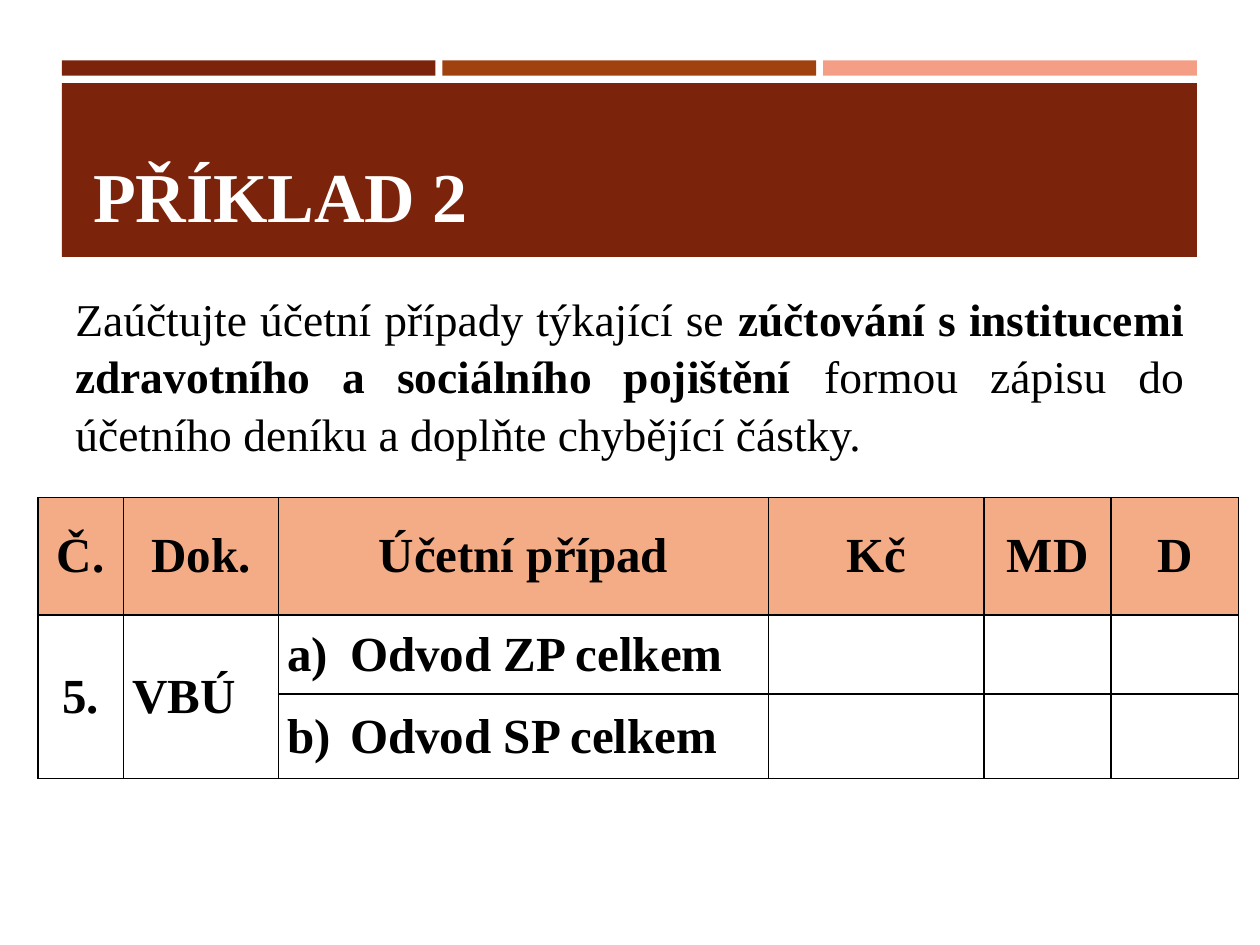
from lxml import etree
from pptx import Presentation
from pptx.dml.color import RGBColor
from pptx.enum.shapes import MSO_SHAPE
from pptx.enum.text import MSO_ANCHOR, PP_ALIGN
from pptx.oxml.ns import qn
from pptx.util import Inches, Pt

RECT = MSO_SHAPE.RECTANGLE
TOP, MIDDLE, BOTTOM = MSO_ANCHOR.TOP, MSO_ANCHOR.MIDDLE, MSO_ANCHOR.BOTTOM
LEFT, CENTER, JUSTIFY = PP_ALIGN.LEFT, PP_ALIGN.CENTER, PP_ALIGN.JUSTIFY

BLACK, WHITE = "000000", "FFFFFF"
MAROON, RUST, SALMON, PEACH = "7B230B", "9F4210", "F49E86", "F3AC85"


def rgb(color):
    return RGBColor.from_string(color)


class Deck:
    """Style and current slide; lengths are cells of a 100 x 75 grid."""

    font = "Times New Roman"
    cols, rows = 100, 75

    def __init__(self, prs):
        self.prs = prs
        self.s = prs.slides.add_slide(prs.slide_layouts[6])

    def x(self, n):
        return round(self.prs.slide_width * n / self.cols)

    def y(self, n):
        return round(self.prs.slide_height * n / self.rows)

    def box(self, left, top, width, height):
        return self.x(left), self.y(top), self.x(width), self.y(height)

    def style(self, p, size, color=BLACK, bold=None, align=LEFT):
        p.alignment = align
        p.font.name, p.font.size, p.font.bold = self.font, Pt(size), bold
        p.font.color.rgb = rgb(color)

    def bar(self, *place, color):
        sp = self.s.shapes.add_shape(RECT, *self.box(*place))
        sp.shadow.inherit = False
        sp.fill.solid()
        sp.fill.fore_color.rgb = rgb(color)
        sp.line.fill.background()

    def text(self, *place, runs, size, anchor=TOP, spacing=1, **look):
        """Add one paragraph; runs are (text, bold) pairs."""
        tf = self.s.shapes.add_textbox(*self.box(*place)).text_frame
        tf.word_wrap = True
        tf.vertical_anchor = anchor
        p = tf.paragraphs[0]
        p.line_spacing = spacing
        self.style(p, size, **look)
        for words, bold in runs:
            r = p.add_run()
            r.text, r.font.bold = words, bold

    def table(self, left, top, widths, heights):
        place = self.box(left, top, sum(widths), sum(heights))
        table = self.s.shapes.add_table(len(heights), len(widths), *place).table
        for column, width in zip(table.columns, widths):
            column.width = self.x(width)
        for row, height in zip(table.rows, heights):
            row.height = self.y(height)
        return table

    def cell(self, cell, words, size, fill=None, align=LEFT, hang=0):
        """Fill one cell; hang is the indent after a typed list label."""
        cell.vertical_anchor = MIDDLE
        cell.margin_left = cell.margin_right = Inches(0.07)
        cell.margin_top = cell.margin_bottom = 0
        p = cell.text_frame.paragraphs[0]
        p.text = words
        self.style(p, size, bold=True, align=align)
        if hang:
            pPr = p._p.get_or_add_pPr()
            pPr.set("marL", str(self.x(hang)))
            pPr.set("indent", str(-self.x(hang)))
        self.borders(cell)
        if fill:
            cell.fill.solid()
            cell.fill.fore_color.rgb = rgb(fill)
        else:
            cell.fill.background()

    def borders(self, cell):
        tcPr = cell._tc.get_or_add_tcPr()
        for side in ("a:lnL", "a:lnR", "a:lnT", "a:lnB"):
            ln = etree.SubElement(tcPr, qn(side), w=str(Pt(1)))
            fill = etree.SubElement(ln, qn("a:solidFill"))
            etree.SubElement(fill, qn("a:srgbClr"), val=BLACK)


def main():
    prs = Presentation()
    prs.slide_width, prs.slide_height = Inches(10), Inches(7.5)
    deck = Deck(prs)

    left, width, gap = 4.9, 90.1, 0.55
    bar_width = (width - 2 * gap) / 3
    for i, color in enumerate((MAROON, RUST, SALMON)):
        deck.bar(left + i * (bar_width + gap), 4.8, bar_width, 1.2, color=color)
    deck.bar(left, 6.6, width, 13.8, color=MAROON)

    deck.text(6.4, 7.5, 87.4, 11.8, runs=[("PŘÍKLAD 2", True)],
              size=40, color=WHITE, anchor=BOTTOM)
    deck.text(5, 22.4, 90, 14.1, size=26, align=JUSTIFY, spacing=1.05, runs=[
        ("Zaúčtujte účetní případy týkající se ", False),
        ("zúčtování s institucemi zdravotního a sociálního pojištění ", True),
        ("formou zápisu do účetního deníku a doplňte chybějící částky.", False),
    ])

    journal = [
        ["Č.", "Dok.", "Účetní případ", "Kč", "MD", "D"],
        ["5.", "VBÚ", "a)\tOdvod ZP celkem", "", "", ""],
        ["", "", "b)\tOdvod SP celkem", "", "", ""],
    ]
    table = deck.table(3, 39.5, [6.8, 12.3, 38.9, 17.1, 10.1, 10.1],
                       [9.3, 6.3, 6.7])
    body_aligns = [CENTER, LEFT, JUSTIFY, LEFT, LEFT, LEFT]
    for i, row in enumerate(journal):
        for j, words in enumerate(row):
            deck.cell(table.cell(i, j), words, 28,
                      fill=PEACH if i == 0 else None,
                      align=CENTER if i == 0 else body_aligns[j],
                      hang=5 if "\t" in words else 0)
    for j in (0, 1):
        table.cell(1, j).merge(table.cell(2, j))

    prs.save("out.pptx")


if __name__ == "__main__":
    main()
